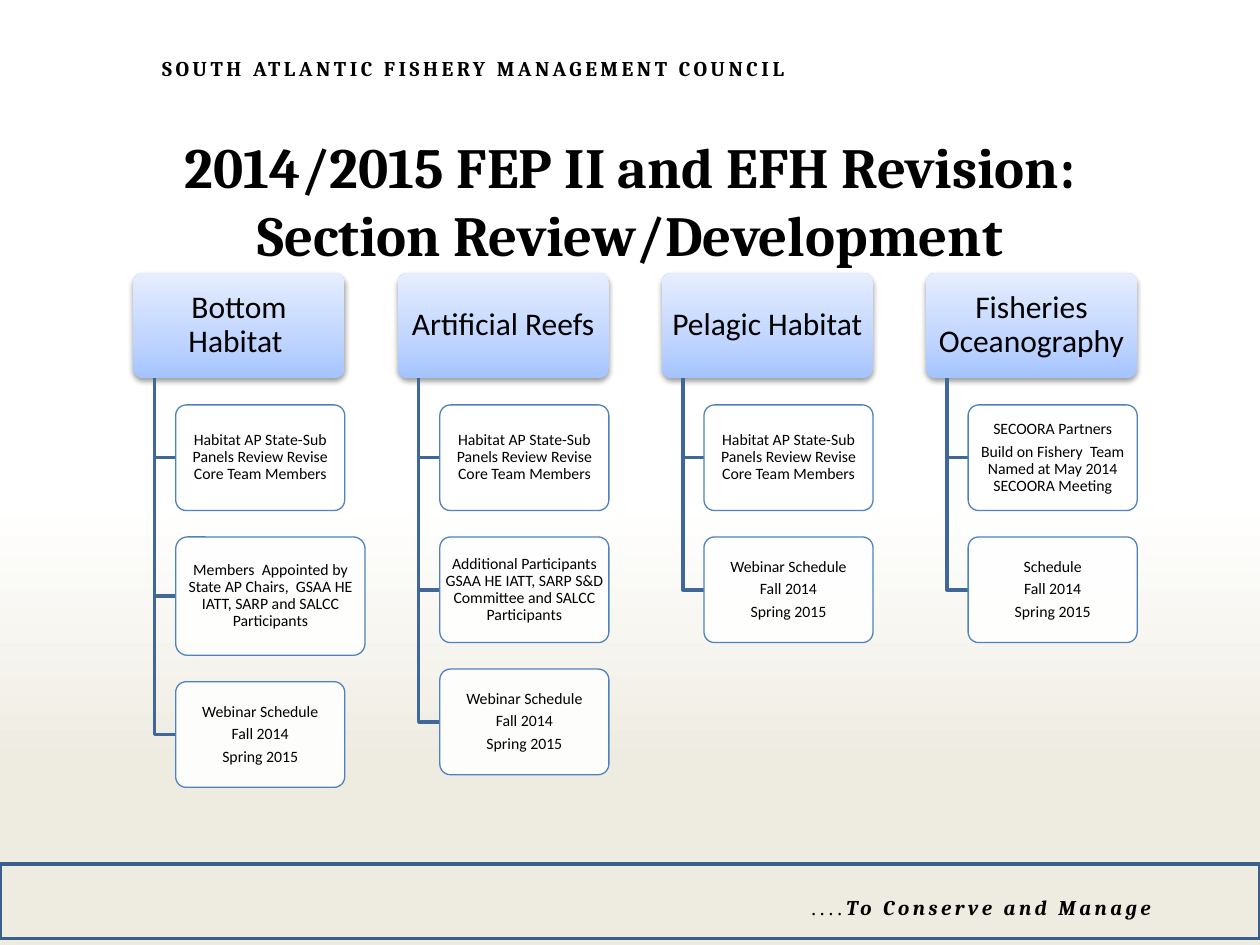
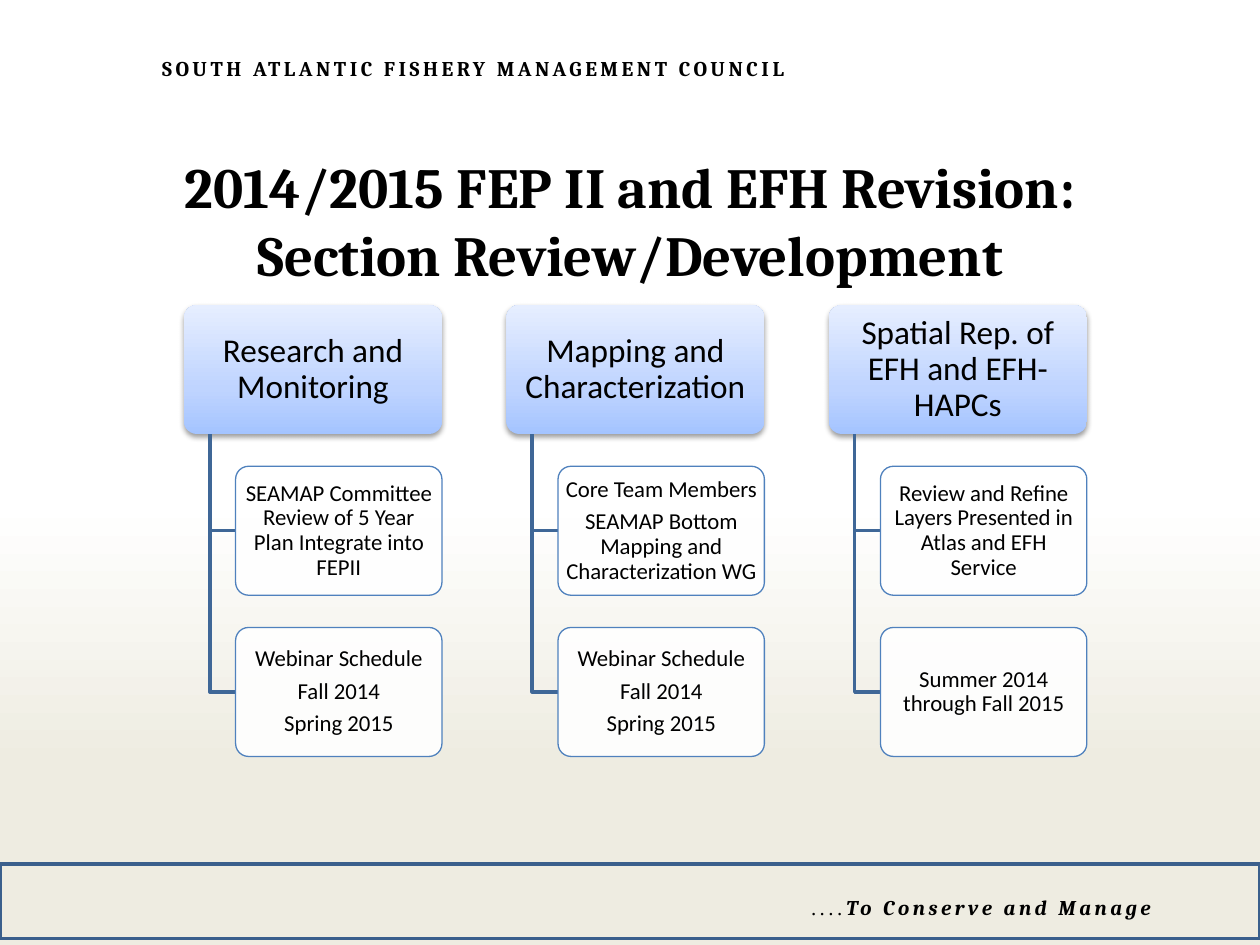
from collections import namedtuple
from copy import deepcopy

from lxml.etree import SubElement
from pptx import Presentation
from pptx.dml.color import RGBColor
from pptx.enum.shapes import MSO_SHAPE as Shape
from pptx.enum.text import MSO_ANCHOR as Anchor, PP_ALIGN as Align
from pptx.oxml.ns import qn
from pptx.util import Cm, Pt

BLACK = RGBColor(0x00, 0x00, 0x00)
WHITE = RGBColor(0xFF, 0xFF, 0xFF)
SAND = RGBColor(0xEE, 0xEC, 0xE1)
NAVY = RGBColor(0x3A, 0x5F, 0x8C)
STEEL = RGBColor(0x3F, 0x67, 0x97)
BLUE = RGBColor(0x4F, 0x81, 0xBD)
PAGE = [(0.53, WHITE), (0.81, SAND)]
GLOSS = [(0, RGBColor(0xA4, 0xC4, 0xFF)), (0.35, RGBColor(0xBF, 0xD4, 0xFF)),
         (1, RGBColor(0xE6, 0xEE, 0xFF))]

TITLE = "2014/2015 FEP II and EFH Revision: Section Review/Development"
REVIEW = "Habitat AP State-Sub Panels Review Revise Core Team Members"
DATES = "Schedule\nFall 2014\nSpring 2015"
WEBINAR = "Webinar " + DATES

Leaf = namedtuple("Leaf", "text scale", defaults=[1])
Tree = namedtuple("Tree", "left top width head_size leaf_size branches")

HABITAT = Tree(2.69, 5.5, 4.26, 18, 9, [
    ("Bottom Habitat ", [
        Leaf(REVIEW),
        Leaf("Members  Appointed by State AP Chairs,  GSAA HE IATT, "
             "SARP and SALCC Participants", 1.12),
        Leaf(WEBINAR)]),
    ("Artificial Reefs", [
        Leaf(REVIEW),
        Leaf("Additional Participants GSAA HE IATT, SARP S&D Committee "
             "and SALCC Participants"),
        Leaf(WEBINAR)]),
    ("Pelagic Habitat", [Leaf(REVIEW), Leaf(WEBINAR)]),
    ("Fisheries Oceanography", [
        Leaf("SECOORA Partners\nBuild on Fishery  Team Named at May 2014 "
             "SECOORA Meeting"),
        Leaf(DATES)]),
])
SCIENCE = Tree(3.71, 6.15, 5.2, 19, 13, [
    ("Research and Monitoring", [
        Leaf("SEAMAP Committee Review of 5 Year Plan Integrate into FEPII"),
        Leaf(WEBINAR)]),
    ("Mapping and Characterization", [
        Leaf("Core Team Members\nSEAMAP Bottom Mapping and "
             "Characterization WG"),
        Leaf(WEBINAR)]),
    ("Spatial Rep. of EFH and EFH-HAPCs", [
        Leaf("Review and Refine Layers Presented in Atlas and EFH Service"),
        Leaf("Summer 2014 through Fall 2015")]),
])


def style(font, size, name, bold=None, italic=None):
    """Set a black font."""
    font.size, font.name, font.bold, font.italic = Pt(size), name, bold, italic
    font.color.rgb = BLACK


def tint(fill, stops, angle):
    """Colour the stops of a gradient fill."""
    fill.gradient_angle = angle
    for stop, (place, color) in zip(fill.gradient_stops, stops):
        stop.position = place
        stop.color.rgb = color


def add_text(slide, left, top, width, height):
    """Add a wrapping text box and return its frame."""
    frame = slide.shapes.add_textbox(
        Cm(left), Cm(top), Cm(width), Cm(height)).text_frame
    frame.word_wrap = True
    return frame


def add_run(para, text):
    """Add a run with wide letter spacing."""
    run = para.add_run()
    run.text = text
    run._r.get_or_add_rPr().set("spc", "200")
    return run


def add_frame(slide):
    """Add the background, council name and footer band."""
    fill = slide.background.fill
    fill.gradient()
    tint(fill, PAGE, 270)
    para = add_text(slide, 3.02, 0.99, 22.3, 0.76).paragraphs[0]
    add_run(para, "SOUTH ATLANTIC FISHERY MANAGEMENT COUNCIL")
    style(para.font, 12, "Cambria", bold=True)
    para = add_text(slide, 16.1, 17.91, 9.3, 0.76).paragraphs[0]
    style(add_run(para, "....").font, 12, "Times New Roman")
    style(add_run(para, "To Conserve and Manage").font, 12, "Cambria", True, True)
    band = slide.shapes.add_shape(
        Shape.RECTANGLE, Cm(0), Cm(17.42), Cm(25.4), Cm(1.5))
    band.shadow.inherit = False
    band.fill.background()
    band.line.color.rgb = NAVY
    band.line.width = Pt(2)


def add_title(slide, top):
    """Add the centred slide title."""
    frame = add_text(slide, 1.9, top, 21.6, 3.38)
    frame.vertical_anchor = Anchor.MIDDLE
    frame.text = TITLE
    para = frame.paragraphs[0]
    para.alignment = Align.CENTER
    style(para.font, 32.4, "Cambria", bold=True)


def add_box(slide, left, top, width, height, text, size):
    """Add a rounded box with centred paragraphs."""
    box = slide.shapes.add_shape(
        Shape.ROUNDED_RECTANGLE, Cm(left), Cm(top), Cm(width), Cm(height))
    box.adjustments[0] = 0.1
    box.shadow.inherit = False
    frame = box.text_frame
    frame.word_wrap = True
    frame.vertical_anchor = Anchor.MIDDLE
    frame.margin_left = frame.margin_right = Pt(size * 0.15)
    frame.margin_top = frame.margin_bottom = Pt(size * 0.1)
    frame.text = text
    for para in frame.paragraphs:
        para.alignment = Align.CENTER
        para.line_spacing = 0.9
        para.space_after = Pt(size * 0.35)
        style(para.font, size, "Calibri")
    return box


def add_head(slide, *args):
    """Add a glossy heading box with a soft shadow."""
    box = add_box(slide, *args)
    box.line.fill.background()
    box.fill.gradient()
    props = box._element.spPr
    stops = props.find(".//" + qn("a:gsLst"))
    stops.append(deepcopy(stops[-1]))
    tint(box.fill, GLOSS, 90)
    glow = SubElement(props.find(qn("a:effectLst")), qn("a:outerShdw"),
                      blurRad="40000", dist="20000", dir="5400000",
                      rotWithShape="0")
    color = SubElement(glow, qn("a:srgbClr"), val=str(BLACK))
    SubElement(color, qn("a:alpha"), val="38000")


def add_leaf(slide, *args):
    """Add a translucent white box with a blue outline."""
    box = add_box(slide, *args)
    box.fill.solid()
    box.fill.fore_color.rgb = WHITE
    color = box._element.spPr.find(".//" + qn("a:srgbClr"))
    SubElement(color, qn("a:alpha"), val="90000")
    box.line.color.rgb = BLUE
    box.line.width = Pt(0.75)


def add_elbow(slide, left, top, right, bottom):
    """Add a line that runs down and then right."""
    path = slide.shapes.build_freeform(Cm(left), Cm(top))
    path.add_line_segments(
        [(Cm(left), Cm(bottom)), (Cm(right), Cm(bottom))], close=False)
    elbow = path.convert_to_shape()
    elbow.shadow.inherit = False
    elbow.fill.background()
    elbow.line.color.rgb = STEEL
    elbow.line.width = Pt(2)


def add_tree(slide, tree):
    """Add headings in a row, each with its leaves hung below."""
    width, height, gap = tree.width, tree.width / 2, tree.width / 8
    base = tree.top + height
    for col, (head, leaves) in enumerate(tree.branches):
        left = tree.left + col * width * 1.25
        add_head(slide, left, tree.top, width, height, head, tree.head_size)
        inner, top = left + width * 0.2, base + gap
        for leaf in leaves:
            tall = height * leaf.scale
            add_elbow(slide, left + width * 0.1, base, inner, top + tall / 2)
            add_leaf(slide, inner, top, width * 0.8 * leaf.scale, tall,
                     leaf.text, tree.leaf_size)
            top += tall + gap


def main():
    """Build and save both slides."""
    deck = Presentation()
    deck.slide_width, deck.slide_height = Cm(25.4), Cm(19.05)
    for tree, top in ((HABITAT, 2.34), (SCIENCE, 2.74)):
        slide = deck.slides.add_slide(deck.slide_layouts[6])
        add_frame(slide)
        add_tree(slide, tree)
        add_title(slide, top)
    deck.save("out.pptx")


if __name__ == "__main__":
    main()
